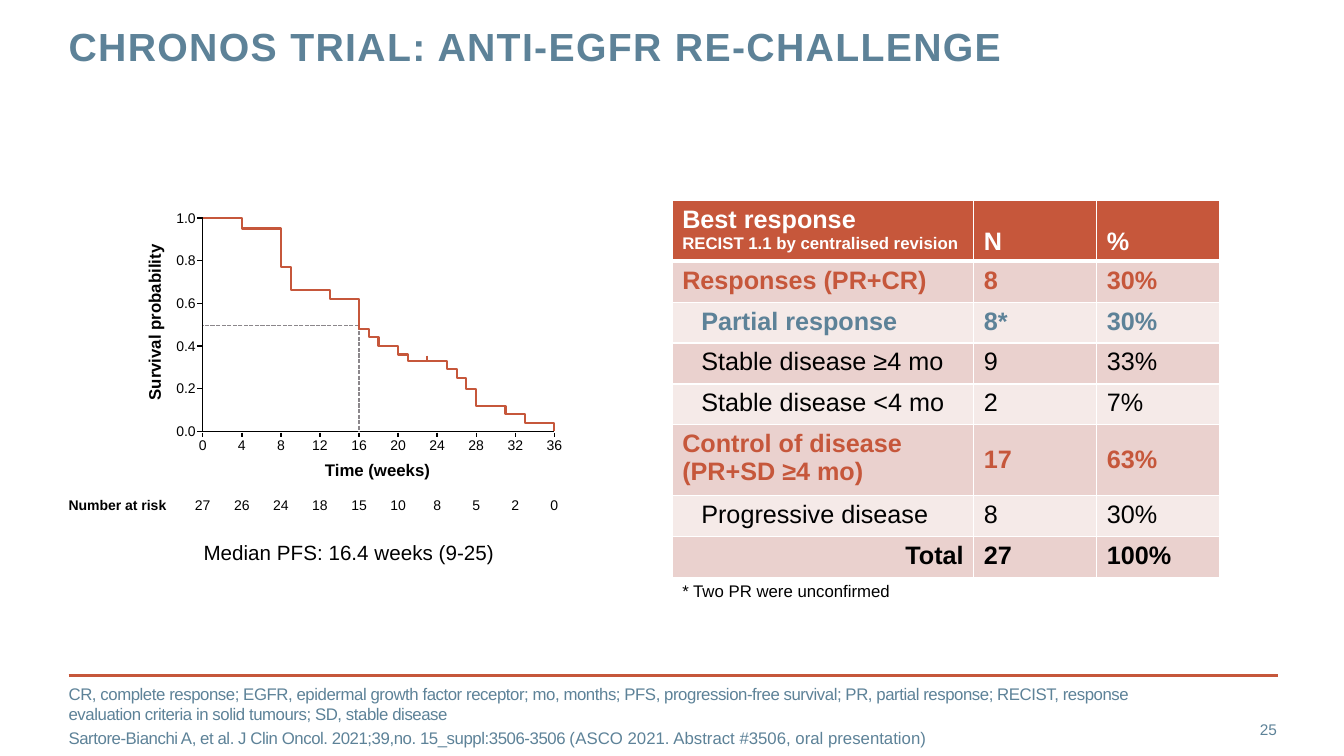
"""Build the CHRONOS trial slide with a survival curve and a response table."""
from dataclasses import dataclass

from lxml.etree import SubElement
from pptx import Presentation
from pptx.dml.color import RGBColor
from pptx.enum.dml import MSO_LINE
from pptx.enum.shapes import MSO_CONNECTOR as Link, MSO_SHAPE as Form
from pptx.enum.text import MSO_ANCHOR as Anchor, PP_ALIGN as Align
from pptx.oxml.ns import qn
from pptx.util import Cm, Pt

RED, BLUE, BLACK, WHITE, GREY = "C6573B", "5D8298", "000000", "FFFFFF", "8B878B"
ROSE, PALE = "EAD1CE", "F5EAE8"
LEFT, BASE, WIDE, TALL = 5.11, 10.87, 8.86, 5.38
LAST = 36


@dataclass
class Label:
    text: str
    left: float
    top: float
    width: float
    height: float
    size: float = 10
    color: str = BLACK
    bold: bool = False
    align: Align = Align.LEFT
    anchor: Anchor = Anchor.TOP
    wrap: bool = False
    space: float = 0
    inset: bool = False
    turn: float = 0


@dataclass
class Rule:
    x1: float
    y1: float
    x2: float
    y2: float
    color: str = BLACK
    weight: float = 1
    dash: bool = False


@dataclass
class Row:
    cells: tuple
    height: float = 1.03
    fill: str = ROSE
    color: str = BLACK
    bold: bool = False
    indent: bool = False
    align: Align = Align.LEFT
    anchor: Anchor = Anchor.TOP


def paint(code: str) -> RGBColor:
    return RGBColor.from_string(code)


def style(run, size: float, color: str, bold: bool = False, space: float = 0) -> None:
    font = run.font
    font.name, font.size, font.bold = "Arial", Pt(size), bold
    font.color.rgb = paint(color)
    if space:
        run._r.get_or_add_rPr().set("spc", str(round(space * 100)))


def write(shape, label: Label) -> None:
    frame = shape.text_frame
    frame.word_wrap = label.wrap
    frame.vertical_anchor = label.anchor
    if not label.inset:
        frame.margin_left = frame.margin_right = 0
        frame.margin_top = frame.margin_bottom = 0
    frame.text = label.text
    for par in frame.paragraphs:
        par.alignment = label.align
        for run in par.runs:
            style(run, label.size, label.color, label.bold, label.space)


def place(label: Label):
    box = slide.shapes.add_textbox(
        Cm(label.left), Cm(label.top), Cm(label.width), Cm(label.height))
    box.rotation = label.turn
    write(box, label)
    return box


def draw(rule: Rule) -> None:
    line = slide.shapes.add_connector(
        Link.STRAIGHT, Cm(rule.x1), Cm(rule.y1), Cm(rule.x2), Cm(rule.y2))
    line.line.color.rgb = paint(rule.color)
    line.line.width = Pt(rule.weight)
    if rule.dash:
        line.line.dash_style = MSO_LINE.SQUARE_DOT
    SubElement(line._element.spPr, qn("a:effectLst"))


def week_x(week: float) -> float:
    return LEFT + WIDE * week / LAST


def prob_y(prob: float) -> float:
    return BASE - TALL * prob


def center(text: str, mid: float, top: float, height: float) -> Label:
    width = 0.2 * len(text)
    return Label(text, mid - width / 2, top, width, height, align=Align.CENTER)


def draw_axes() -> None:
    title = Label("Time (weeks)", 5.26, 11.46, 8.51, 0.76, 12, bold=True,
                  align=Align.CENTER, anchor=Anchor.MIDDLE, wrap=True, inset=True)
    rect = slide.shapes.add_shape(
        Form.RECTANGLE, Cm(title.left), Cm(title.top), Cm(title.width), Cm(title.height))
    rect.shadow.inherit = False
    rect.fill.solid()
    rect.fill.fore_color.rgb = paint(WHITE)
    rect.line.fill.background()
    write(rect, title)
    place(Label("Survival probability", 1.91, 7.87, 3.96, 0.51, 12, bold=True,
                align=Align.CENTER, turn=270))
    place(Label("Number at risk", 1.73, 12.52, 2.49, 0.38, bold=True))
    risk = (27, 26, 24, 18, 15, 10, 8, 5, 2, 0)
    for week, count in zip(range(0, LAST + 1, 4), risk):
        mid = week_x(week)
        draw(Rule(mid, 10.9, mid, 11.02))
        place(center(str(week), mid, 11, 0.43))
        place(center(str(count), mid, 12.52, 0.38))
    for step in range(6):
        prob = step / 5
        mid = prob_y(prob)
        draw(Rule(LEFT, mid, LEFT - 0.15, mid))
        place(Label(f"{prob:.1f}", 4.23, mid - 0.22, 0.7, 0.43, align=Align.RIGHT, wrap=True))
    draw(Rule(LEFT, prob_y(1), LEFT, BASE))
    draw(Rule(LEFT, BASE, LEFT + WIDE, BASE))


def draw_curve() -> None:
    half, mid = prob_y(0.495), week_x(16)
    draw(Rule(mid, half, LEFT, half, GREY, dash=True))
    draw(Rule(mid, half, mid, BASE, GREY, dash=True))
    drops = ((4, 0.95), (8, 0.77), (9, 0.66), (13, 0.62), (16, 0.48), (17, 0.44),
             (18, 0.4), (20, 0.36), (21, 0.33), (25, 0.29), (26, 0.25), (27, 0.2),
             (28, 0.12), (31, 0.08), (33, 0.04), (LAST, 0))
    level, points = 1, []
    for week, prob in drops:
        points += [(Cm(week_x(week)), Cm(prob_y(value))) for value in (level, prob)]
        level = prob
    pen = slide.shapes.build_freeform(Cm(LEFT), Cm(prob_y(1)))
    pen.add_line_segments(points, close=False)
    curve = pen.convert_to_shape()
    curve.shadow.inherit = False
    curve.fill.background()
    curve.line.color.rgb = paint(RED)
    curve.line.width = Pt(1.5)
    mark = week_x(23)
    draw(Rule(mark, prob_y(0.355), mark, prob_y(0.33), RED, 1.5))


def edge(cell, thick: str) -> None:
    props = cell._tc.get_or_add_tcPr()
    for side in "LRTB":
        weight = 3 if side == thick else 1
        line = SubElement(props, qn(f"a:ln{side}"), w=str(Pt(weight)))
        fill = SubElement(line, qn("a:solidFill"))
        SubElement(fill, qn("a:srgbClr"), val=WHITE)


def draw_table() -> None:
    rows = (
        Row(("Best response\vRECIST 1.1 by centralised revision", "N", "%"), 1.5, RED,
            WHITE, True, anchor=Anchor.BOTTOM),
        Row(("Responses (PR+CR)", "8", "30%"), color=RED, bold=True),
        Row(("Partial response", "8*", "30%"), fill=PALE, color=BLUE, bold=True, indent=True),
        Row(("Stable disease ≥4 mo", "9", "33%"), indent=True),
        Row(("Stable disease <4 mo", "2", "7%"), fill=PALE, indent=True),
        Row(("Control of disease (PR+SD ≥4 mo)", "17", "63%"), 1.77, color=RED, bold=True,
            anchor=Anchor.MIDDLE),
        Row(("Progressive disease", "8", "30%"), fill=PALE, indent=True),
        Row(("Total", "27", "100%"), bold=True, align=Align.RIGHT),
        Row(("* Two PR were unconfirmed", "", ""), fill=""),
    )
    widths = (7.6, 3.1, 3.1)
    table = slide.shapes.add_table(
        len(rows), len(widths), Cm(16.94), Cm(5.06), Cm(sum(widths)),
        Cm(sum(row.height for row in rows))).table
    for col, width in zip(table.columns, widths):
        col.width = Cm(width)
    for r, row in enumerate(rows):
        table.rows[r].height = Cm(row.height)
        for c, text in enumerate(row.cells):
            cell = table.cell(r, c)
            edge(cell, {0: "B", 1: "T"}.get(r, ""))
            if row.fill:
                cell.fill.solid()
                cell.fill.fore_color.rgb = paint(row.fill)
            else:
                cell.fill.background()
            cell.vertical_anchor = row.anchor if c else Anchor.TOP
            par = cell.text_frame.paragraphs[0]
            par.text = text
            if c == 0:
                par.alignment = row.align
                if row.indent:
                    par._p.get_or_add_pPr().set("marL", str(Cm(0.48)))
            for n, run in enumerate(par.runs):
                style(run, 18 if n == 0 and row.fill else 12, row.color, row.bold)
    table.cell(len(rows) - 1, 0).merge(table.cell(len(rows) - 1, len(widths) - 1))


def draw_foot() -> None:
    draw(Rule(1.73, 17.02, 32.21, 17.02, RED, 2))
    place(Label("25", 30, 17.86, 2.18, 1.02, 11, BLUE, align=Align.RIGHT,
                anchor=Anchor.MIDDLE, wrap=True))
    notes = (
        "CR, complete response; EGFR, epidermal growth factor receptor; mo, months; "
        "PFS, progression-free survival; PR, partial response; RECIST, response "
        "evaluation criteria in solid tumours; SD, stable disease\n"
        "Sartore-Bianchi A, et al. J Clin Oncol. 2021;39,no. 15_suppl:3506-3506 (")
    box = place(Label(notes, 1.73, 17.53, 28.27, 1.02, 12, BLUE,
                      anchor=Anchor.MIDDLE, wrap=True, space=-0.3))
    cite = box.text_frame.paragraphs[1]
    cite.space_before = Pt(3)
    run = cite.add_run()
    run.text = "ASCO 2021. Abstract #3506, oral presentation)"
    style(run, 12, BLUE)


deck = Presentation()
deck.slide_width, deck.slide_height = Cm(33.87), Cm(19.05)
slide = deck.slides.add_slide(deck.slide_layouts[6])
head = place(Label("CHRONOS TRIAL: ANTI-EGFR RE-CHALLENGE", 1.73, 0.69, 24.28, 2.24, 28,
                   BLUE, True, wrap=True, space=1))
head.text_frame.paragraphs[0].line_spacing = Pt(30)
draw_axes()
draw_curve()
place(Label("Median PFS: 16.4 weeks (9-25)", 4.88, 13.49, 7.85, 0.89, 14.7, inset=True))
draw_table()
draw_foot()
deck.save("out.pptx")
